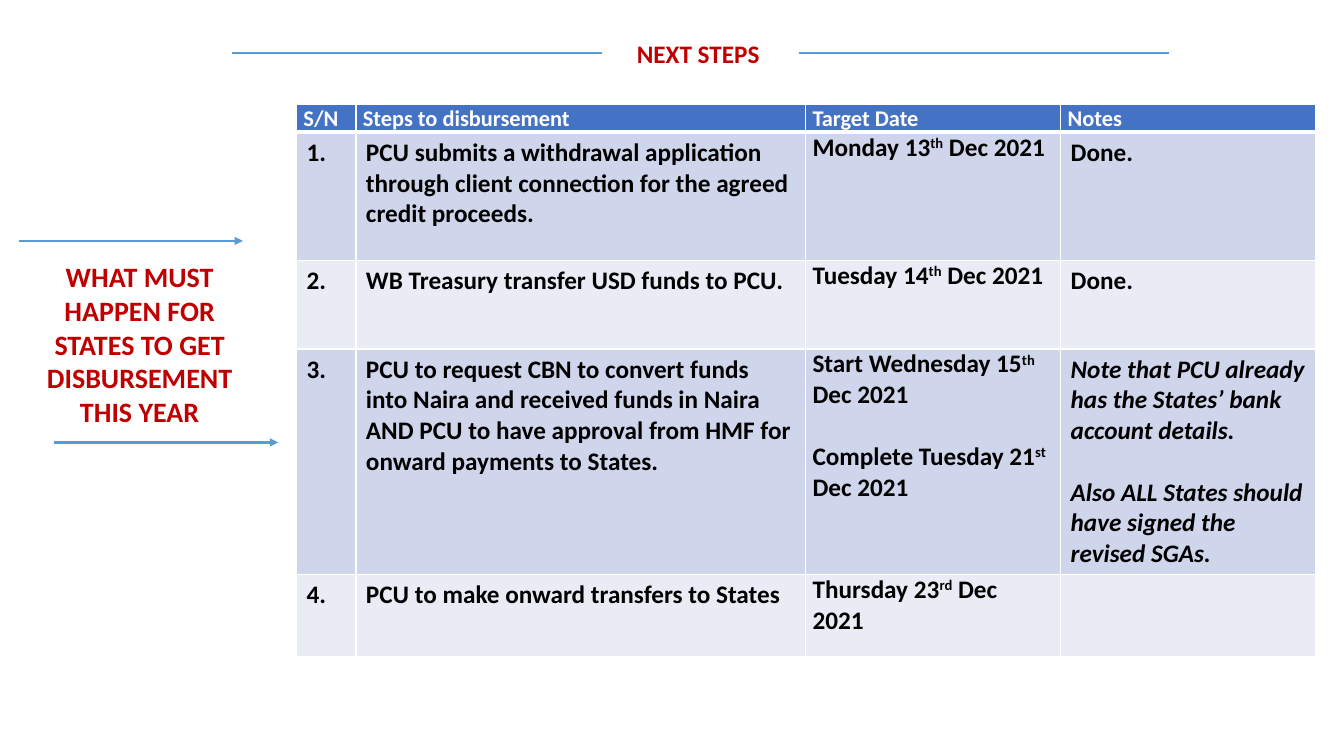
from dataclasses import dataclass

from lxml import etree
from pptx import Presentation
from pptx.dml.color import RGBColor
from pptx.enum.shapes import MSO_CONNECTOR
from pptx.enum.text import MSO_ANCHOR, MSO_AUTO_SIZE, PP_ALIGN
from pptx.oxml.ns import qn
from pptx.util import Inches, Pt


@dataclass(frozen=True)
class Theme:
    font: str = "Calibri"
    heading: str = "C00000"
    rule: str = "5B9BD5"
    header_fill: str = "4472C4"
    header_text: str = "FFFFFF"
    body_text: str = "000000"
    bands: tuple = ("CFD5EA", "E9EBF5")
    border: str = "FFFFFF"
    title_size: int = 18
    callout_size: int = 20
    header_size: int = 16
    body_size: int = 18


THEME = Theme()

COLUMN_WIDTHS = (0.59, 4.46, 2.53, 2.53)
ROW_HEIGHTS = (0.26, 1.27, 0.88, 2.14, 0.82)
DATE_COLUMN, NOTES_COLUMN = 2, 3

HEADERS = ("S/N", "Steps to disbursement", "Target Date", "Notes")
# A cell lists its paragraphs; text between carets is superscript.
STEPS = (
    (["1."],
     ["PCU submits a withdrawal application through client connection "
      "for the agreed credit proceeds."],
     ["Monday 13^th^ Dec 2021"],
     ["Done."]),
    (["2."],
     ["WB Treasury transfer USD funds to PCU."],
     ["Tuesday 14^th^ Dec 2021"],
     ["Done."]),
    (["3."],
     ["PCU to request CBN to convert funds into Naira and received funds in "
      "Naira AND PCU to have approval from HMF for onward payments to States."],
     ["Start Wednesday 15^th^ Dec 2021", "Complete Tuesday 21^st^ Dec 2021"],
     ["Note that PCU already has the States’ bank account details.",
      "Also ALL States should have signed the revised SGAs."]),
    (["4."],
     ["PCU to make onward transfers to States"],
     ["Thursday 23^rd^ Dec 2021"],
     []),
)


def add_runs(paragraph, text, size, color, italic=False):
    """Add bold runs, raising the parts enclosed in carets."""
    for index, part in enumerate(text.split("^")):
        run = paragraph.add_run()
        run.text = part
        font = run.font
        font.name, font.size = THEME.font, Pt(size)
        font.bold, font.italic = True, italic
        font.color.rgb = RGBColor.from_string(color)
        if index % 2:
            run._r.get_or_add_rPr().set("baseline", "30000")


def place(shape, left, top, width, height):
    shape.left, shape.top = Inches(left), Inches(top)
    shape.width, shape.height = Inches(width), Inches(height)


def fill_title(title):
    place(title, 3.43, 0.21, 6.99, 0.63)
    frame = title.text_frame
    frame.auto_size = MSO_AUTO_SIZE.NONE
    frame.vertical_anchor = MSO_ANCHOR.MIDDLE
    paragraph = frame.paragraphs[0]
    paragraph.alignment = PP_ALIGN.CENTER
    paragraph.line_spacing = 1.06
    add_runs(paragraph, "NEXT STEPS", THEME.title_size, THEME.heading)


def add_callout(slide, text, left, top, width, height):
    frame = slide.shapes.add_textbox(
        Inches(left), Inches(top), Inches(width), Inches(height)).text_frame
    frame.word_wrap = True
    paragraph = frame.paragraphs[0]
    paragraph.alignment = PP_ALIGN.CENTER
    add_runs(paragraph, text, THEME.callout_size, THEME.heading)


def add_rule(slide, left, top, length, arrow=False):
    rule = slide.shapes.add_connector(
        MSO_CONNECTOR.STRAIGHT, Inches(left), Inches(top),
        Inches(left + length), Inches(top))
    rule.line.color.rgb = RGBColor.from_string(THEME.rule)
    rule.line.width = Pt(1.5)
    if arrow:
        etree.SubElement(rule.line._get_or_add_ln(), qn("a:tailEnd"), type="triangle")
    etree.SubElement(rule._element.spPr, qn("a:effectLst"))


def set_borders(cell, top=1, bottom=1):
    """Draw the four cell borders, with top and bottom widths in points."""
    properties = cell._tc.get_or_add_tcPr()
    widths = {"a:lnL": 1, "a:lnR": 1, "a:lnT": top, "a:lnB": bottom}
    for index, (side, width) in enumerate(widths.items()):
        line = etree.Element(qn(side), w=str(Pt(width)))
        fill = etree.SubElement(line, qn("a:solidFill"))
        etree.SubElement(fill, qn("a:srgbClr"), val=THEME.border)
        properties.insert(index, line)


def fill_cell(cell, paragraphs, fill, size, color, italic=False, tight=False):
    cell.fill.solid()
    cell.fill.fore_color.rgb = RGBColor.from_string(fill)
    if tight:
        cell.margin_left = cell.margin_right = Inches(0.07)
        cell.margin_top = cell.margin_bottom = 0
    frame = cell.text_frame
    for index, text in enumerate(paragraphs):
        paragraph = frame.add_paragraph() if index else frame.paragraphs[0]
        if index:
            paragraph.space_before = Pt(22)
        add_runs(paragraph, text, size, color, italic)


def add_steps_table(slide):
    table = slide.shapes.add_table(
        len(ROW_HEIGHTS), len(COLUMN_WIDTHS), Inches(2.94), Inches(1.04),
        Inches(sum(COLUMN_WIDTHS)), Inches(sum(ROW_HEIGHTS))).table
    for column, width in zip(table.columns, COLUMN_WIDTHS):
        column.width = Inches(width)
    for row, height in zip(table.rows, ROW_HEIGHTS):
        row.height = Inches(height)

    for column, header in enumerate(HEADERS):
        cell = table.cell(0, column)
        fill_cell(cell, [header], THEME.header_fill, THEME.header_size,
                  THEME.header_text, tight=True)
        set_borders(cell, bottom=3)

    for row, step in enumerate(STEPS, start=1):
        for column, paragraphs in enumerate(step):
            cell = table.cell(row, column)
            remark = column == NOTES_COLUMN and len(paragraphs) > 1
            fill_cell(cell, paragraphs, THEME.bands[(row - 1) % 2],
                      THEME.body_size, THEME.body_text, italic=remark,
                      tight=column == DATE_COLUMN)
            set_borders(cell, top=3 if row == 1 else 1)


def main():
    deck = Presentation()
    deck.slide_width, deck.slide_height = Inches(13.33), Inches(7.5)
    slide = deck.slides.add_slide(deck.slide_layouts.get_by_name("Title Only"))

    fill_title(slide.shapes.title)
    for left in (2.3, 7.92):
        add_rule(slide, left, 0.53, 3.67)
    add_steps_table(slide)
    add_callout(slide, "WHAT MUST HAPPEN FOR STATES TO GET DISBURSEMENT THIS YEAR",
                0.19, 2.53, 2.39, 1.78)
    for left, top in ((0.19, 2.39), (0.54, 4.39)):
        add_rule(slide, left, top, 2.22, arrow=True)

    deck.save("out.pptx")


if __name__ == "__main__":
    main()
